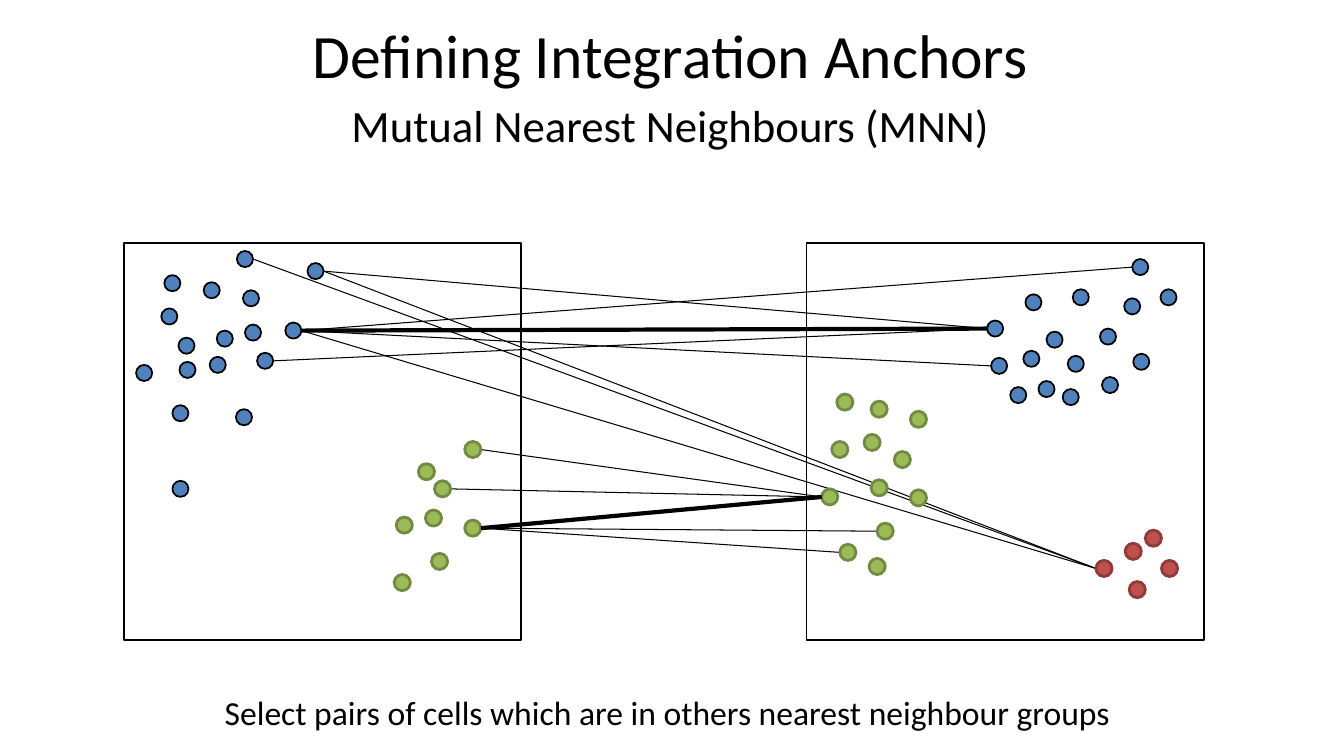
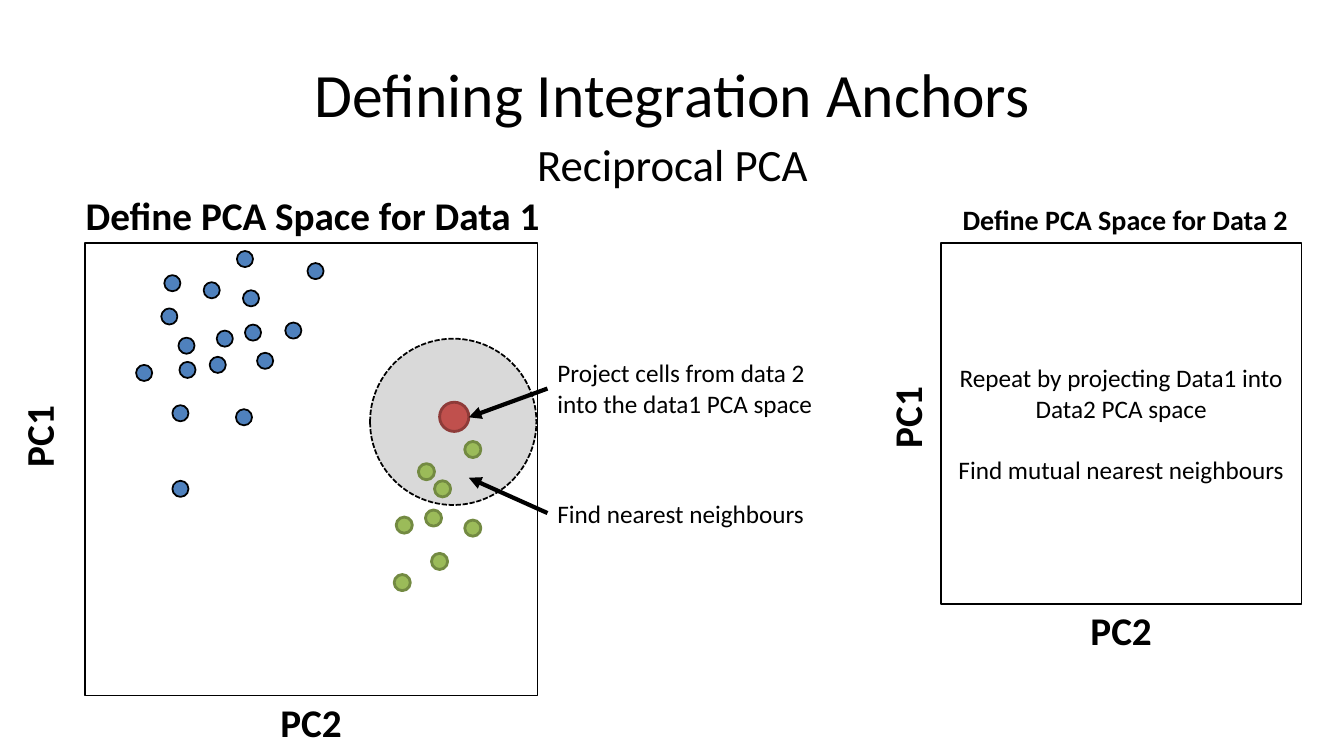
from lxml.etree import SubElement
from pptx import Presentation
from pptx.dml.color import RGBColor
from pptx.enum.dml import MSO_LINE
from pptx.enum.shapes import MSO_CONNECTOR, MSO_SHAPE
from pptx.enum.text import MSO_ANCHOR, MSO_AUTO_SIZE, PP_ALIGN
from pptx.oxml.ns import qn
from pptx.util import Inches, Pt

BLACK = RGBColor(0x00, 0x00, 0x00)
WHITE = RGBColor(0xFF, 0xFF, 0xFF)
GREY = RGBColor(0xD9, 0xD9, 0xD9)
BLUE = RGBColor(0x4F, 0x81, 0xBD)
GREEN = RGBColor(0x9B, 0xBB, 0x59)
DARK_GREEN = RGBColor(0x73, 0x8A, 0x42)
RED = RGBColor(0xC0, 0x50, 0x4D)
DARK_RED = RGBColor(0x8E, 0x3B, 0x39)

FONT = "Calibri"
CELL_SIZE = 0.16
# Fill, outline colour and outline width of each cell type
CELL_STYLES = {
    "blue": (BLUE, BLACK, 1.25),
    "green": (GREEN, DARK_GREEN, 2),
    "red": (RED, DARK_RED, 2),
}

# Cell offsets from the top left corner of each data set
DATA_1_ORIGIN = (1.23, 2.41)
DATA_2_ORIGIN = (8, 2.41)
DATA_1 = {
    "blue": [
        (0.4, 0.32), (0.37, 0.65), (0.79, 0.39), (0.55, 1.18), (0.92, 0.87), (1.18, 0.47),
        (0.12, 1.21), (0.85, 1.13), (1.82, 0.2), (1.6, 0.79), (1.11, 1.65), (1.32, 1.09),
        (0.48, 2.36), (0.48, 1.61), (1.2, 0.81), (1.12, 0.08), (0.54, 0.94),
    ],
    "green": [
        (2.92, 2.19), (3.08, 2.36), (2.7, 2.72), (2.99, 2.65),
        (3.05, 3.08), (3.38, 1.97), (3.38, 2.75), (2.68, 3.29),
    ],
}
DATA_2 = {
    "blue": [
        (1.83, 1.14), (2.02, 1.43), (1.79, 0.77), (3.51, 0.46), (2.15, 1.07), (2.38, 0.88),
        (2.54, 1.45), (2.64, 0.46), (2.91, 0.85), (3.24, 1.1), (2.59, 1.12), (2.93, 1.33),
        (3.23, 0.16), (3.15, 0.55), (2.17, 0.51), (2.3, 1.37),
    ],
    "green": [
        (0.57, 1.9), (0.87, 2.07), (0.3, 1.5), (0.64, 2.35), (0.7, 2.78), (1.03, 1.67),
        (1.03, 2.45), (0.33, 2.99), (0.25, 1.97), (0.64, 1.57), (0.15, 2.44), (0.62, 3.13),
    ],
    "red": [(2.87, 3.15), (3.16, 2.98), (3.2, 3.36), (3.36, 2.85), (3.52, 3.15)],
}
# Each link joins a cell of data 1 to a cell of data 2
NEIGHBOUR_LINKS = [
    (("blue", 15), ("red", 0)), (("blue", 8), ("red", 0)), (("blue", 9), ("red", 0)),
    (("blue", 8), ("blue", 2)), (("blue", 11), ("blue", 2)),
    (("blue", 9), ("blue", 12)), (("blue", 9), ("blue", 0)),
    (("green", 6), ("green", 4)), (("green", 6), ("green", 7)),
    (("green", 5), ("green", 10)), (("green", 1), ("green", 10)),
]
MUTUAL_LINKS = [(("blue", 9), ("blue", 2)), (("green", 6), ("green", 10))]


def write(shape, lines, size, bold=False, alignment=PP_ALIGN.LEFT, anchor=MSO_ANCHOR.TOP,
          space_before=0):
    frame = shape.text_frame
    frame.text = "\n".join(lines)
    frame.word_wrap = True
    frame.vertical_anchor = anchor
    for paragraph in frame.paragraphs:
        paragraph.alignment = alignment
        paragraph.space_before = Pt(space_before)
        for run in paragraph.runs:
            run.font.name = FONT
            run.font.size = Pt(size)
            run.font.bold = bold
            run.font.color.rgb = BLACK


def add_text(slide, box, text, size, **style):
    text_box = slide.shapes.add_textbox(*map(Inches, box))
    write(text_box, [text], size, **style)
    return text_box


def add_label(slide, center_x, center_y, text, size, bold=True, rotation=0):
    """Add a one-line text centred on a point."""
    width, height = 3, size / 60 + 0.1
    label = add_text(slide, (center_x - width / 2, center_y - height / 2, width, height),
                     text, size, bold=bold, alignment=PP_ALIGN.CENTER,
                     anchor=MSO_ANCHOR.MIDDLE)
    label.text_frame.word_wrap = False
    label.text_frame.auto_size = MSO_AUTO_SIZE.NONE
    label.rotation = rotation


def add_outlined(slide, kind, box, fill, line, width):
    shape = slide.shapes.add_shape(kind, *map(Inches, box))
    shape.shadow.inherit = False
    shape.fill.solid()
    shape.fill.fore_color.rgb = fill
    shape.line.color.rgb = line
    shape.line.width = Pt(width)
    return shape


def add_frame(slide, box):
    return add_outlined(slide, MSO_SHAPE.RECTANGLE, box, WHITE, BLACK, 1.25)


def add_line(slide, start, end, width, arrow=False):
    connector = slide.shapes.add_connector(
        MSO_CONNECTOR.STRAIGHT, *map(Inches, (*start, *end)))
    connector.line.color.rgb = BLACK
    connector.line.width = Pt(width)
    if arrow:
        SubElement(connector.line._get_or_add_ln(), qn("a:tailEnd"), type="triangle")
    SubElement(connector._element.spPr, qn("a:effectLst"))


def add_cells(slide, origin, cells):
    for cell_type, offsets in cells.items():
        for x, y in offsets:
            add_outlined(slide, MSO_SHAPE.OVAL,
                         (origin[0] + x, origin[1] + y, CELL_SIZE, CELL_SIZE),
                         *CELL_STYLES[cell_type])


def add_links(slide, links, width):
    """Join the right side of cells in data 1 to the left side of cells in data 2."""
    for (type_1, index_1), (type_2, index_2) in links:
        x_1, y_1 = DATA_1[type_1][index_1]
        x_2, y_2 = DATA_2[type_2][index_2]
        middle = CELL_SIZE / 2
        add_line(slide,
                 (DATA_1_ORIGIN[0] + x_1 + CELL_SIZE, DATA_1_ORIGIN[1] + y_1 + middle),
                 (DATA_2_ORIGIN[0] + x_2, DATA_2_ORIGIN[1] + y_2 + middle), width)


def add_heading(slide, left, top, subtitle):
    add_text(slide, (left, top, 12, 1.25), "Defining Integration Anchors", 44,
             alignment=PP_ALIGN.CENTER, anchor=MSO_ANCHOR.MIDDLE)
    add_text(slide, (left, top + 1.01, 12, 0.64), subtitle, 32,
             alignment=PP_ALIGN.CENTER, space_before=6.4)


def add_pca_panel(slide, box, title, title_size, title_center, axis_center):
    """Add a framed PCA space with its title and axis names."""
    left, top, width, height = box
    frame = add_frame(slide, box)
    add_label(slide, *title_center, title, title_size)
    add_label(slide, *axis_center, "PC1", 28, rotation=270)
    add_label(slide, left + width / 2, top + height + 0.26, "PC2", 28)
    return frame


def add_callout(slide, box, text, target):
    left, top, _, height = box
    add_text(slide, box, text, 18)
    add_line(slide, (left, top + height / 2), target, 3, arrow=True)


def build_mutual_neighbours(slide):
    for origin in (DATA_1_ORIGIN, DATA_2_ORIGIN):
        add_frame(slide, (*origin, 3.94, 3.94))
    add_links(slide, NEIGHBOUR_LINKS, 0.75)
    add_heading(slide, 0.65, -0.09, "Mutual Nearest Neighbours (MNN)")
    add_label(slide, 6.62, 7.06,
              "Select pairs of cells which are in others nearest neighbour groups",
              24, bold=False)
    add_cells(slide, DATA_1_ORIGIN, DATA_1)
    add_cells(slide, DATA_2_ORIGIN, DATA_2)
    add_links(slide, MUTUAL_LINKS, 3)


def build_reciprocal_pca(slide):
    add_heading(slide, 0.67, 0.3, "Reciprocal PCA")
    add_pca_panel(slide, (0.84, 2.41, 4.49, 4.49), "Define PCA Space for Data 1", 28,
                  (3.1, 2.13), (0.38, 4.33))
    neighbourhood = add_outlined(slide, MSO_SHAPE.OVAL, (3.67, 3.36, 1.65, 1.65),
                                 GREY, BLACK, 1.25)
    neighbourhood.line.dash_style = MSO_LINE.SQUARE_DOT
    add_cells(slide, DATA_1_ORIGIN, DATA_1)
    add_outlined(slide, MSO_SHAPE.OVAL, (4.36, 3.99, 0.29, 0.29), *CELL_STYLES["red"])
    add_callout(slide, (5.43, 3.5, 2.82, 0.71),
                "Project cells from data 2 into the data1 PCA space", (4.65, 4.14))
    add_callout(slide, (5.43, 4.89, 2.82, 0.4), "Find nearest neighbours", (4.65, 4.74))

    panel = add_pca_panel(slide, (9.33, 2.41, 3.58, 3.58), "Define PCA Space for Data 2", 20,
                          (11.16, 2.18), (8.99, 4.14))
    write(panel, ["Repeat by projecting Data1 into Data2 PCA space",
                  "Find mutual nearest neighbours"],
          18, alignment=PP_ALIGN.CENTER, anchor=MSO_ANCHOR.MIDDLE)
    panel.text_frame.paragraphs[1].space_before = Pt(22)


def main():
    presentation = Presentation()
    presentation.slide_width = Inches(13.33)
    presentation.slide_height = Inches(7.5)
    blank_layout = presentation.slide_layouts[6]
    for build in (build_mutual_neighbours, build_reciprocal_pca):
        build(presentation.slides.add_slide(blank_layout))
    presentation.save("out.pptx")


if __name__ == "__main__":
    main()
